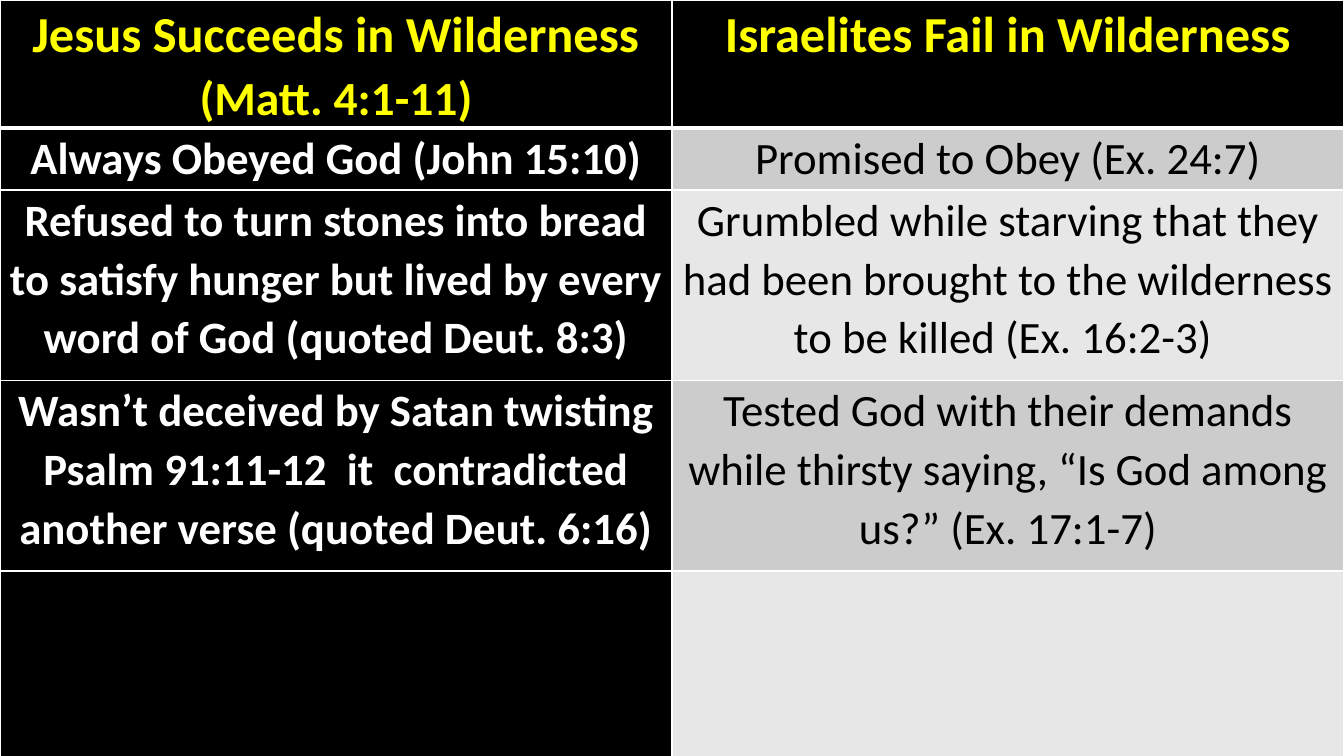
from lxml import etree
from pptx import Presentation, util as u
from pptx.dml.color import RGBColor
from pptx.enum import text
from pptx.oxml.ns import qn

BLACK, WHITE, YELLOW = "000000", "FFFFFF", "FFFF00"
DARK_BAND, LIGHT_BAND = "CCCCCC", "E7E7E7"

HEADER = [
    [("Jesus Succeeds in Wilderness ", 36), ("(Matt. 4:1-11)", 34)],
    [("Israelites Fail in Wilderness", 36)],
]
COMPARISONS = [
    ("Always Obeyed God (John 15:10)", "Promised to Obey (Ex. 24:7)"),
    ("Refused to turn stones into bread to satisfy hunger but lived by every "
     "word of God (quoted Deut. 8:3)",
     "Grumbled while starving that they had been brought to the wilderness "
     "to be killed (Ex. 16:2-3) "),
    ("Wasn’t deceived by Satan twisting Psalm 91:11-12  it  contradicted "
     "another verse (quoted Deut. 6:16)",
     "Tested God with their demands while thirsty saying, “Is God among us?” "
     "(Ex. 17:1-7)"),
    ("", ""),
]
ROW_PERCENTS = [12.3, 8.2, 25.2, 25.2, 25.2]


def color(hex_string):
    return RGBColor.from_string(hex_string)


class ComparisonSlide:
    font_name = "Calibri"
    body_size = 32

    def __init__(self, presentation):
        self.width = presentation.slide_width
        self.height = presentation.slide_height
        self.slide = presentation.slides.add_slide(presentation.slide_layouts[6])
        background = self.slide.background.fill
        background.solid()
        background.fore_color.rgb = color(BLACK)

    def table(self, row_percents, columns):
        """Add a full-width table whose rows are percentages of the slide height."""
        frame = self.slide.shapes.add_table(
            len(row_percents), columns, 0, 0, self.width, self.height)
        table = frame.table
        table.first_row = table.horz_banding = False
        for row, percent in zip(table.rows, row_percents):
            row.height = round(self.height * percent / 100)
        return table

    def borders(self, cell, top=1, bottom=1):
        properties = cell._tc.get_or_add_tcPr()
        for side, points in (("L", 1), ("R", 1), ("T", top), ("B", bottom)):
            line = etree.SubElement(properties, qn(f"a:ln{side}"), w=str(u.Pt(points)))
            fill = etree.SubElement(line, qn("a:solidFill"))
            etree.SubElement(fill, qn("a:srgbClr"), val=WHITE)

    def cell(self, cell, runs, fill, font_color, bold):
        """Fill a cell and write its (text, size) runs."""
        cell.margin_left = cell.margin_right = u.Inches(0.07)
        cell.margin_top = cell.margin_bottom = 0
        cell.fill.solid()
        cell.fill.fore_color.rgb = color(fill)
        paragraph = cell.text_frame.paragraphs[0]
        paragraph.alignment = text.PP_ALIGN.CENTER
        paragraph.line_spacing = 1.07
        paragraph.font.name = self.font_name
        paragraph.font.bold = bold
        paragraph.font.color.rgb = color(font_color)
        for words, size in runs:
            run = paragraph.add_run()
            run.text = words
            run.font.size = u.Pt(size)


def main():
    presentation = Presentation()
    presentation.slide_width = u.Inches(13.33)
    presentation.slide_height = u.Inches(7.5)
    page = ComparisonSlide(presentation)
    table = page.table(ROW_PERCENTS, columns=2)

    for column, runs in enumerate(HEADER):
        heading = table.cell(0, column)
        page.borders(heading, bottom=3)
        page.cell(heading, runs, BLACK, YELLOW, bold=True)

    for row, sides in enumerate(COMPARISONS, start=1):
        band = DARK_BAND if row % 2 else LIGHT_BAND
        styles = [(BLACK, WHITE, True), (band, BLACK, False)]
        for column, (words, style) in enumerate(zip(sides, styles)):
            cell = table.cell(row, column)
            page.borders(cell, top=3 if row == 1 else 1)
            runs = [(words, page.body_size)] if words else []
            page.cell(cell, runs, *style)

    presentation.save("out.pptx")


if __name__ == "__main__":
    main()
